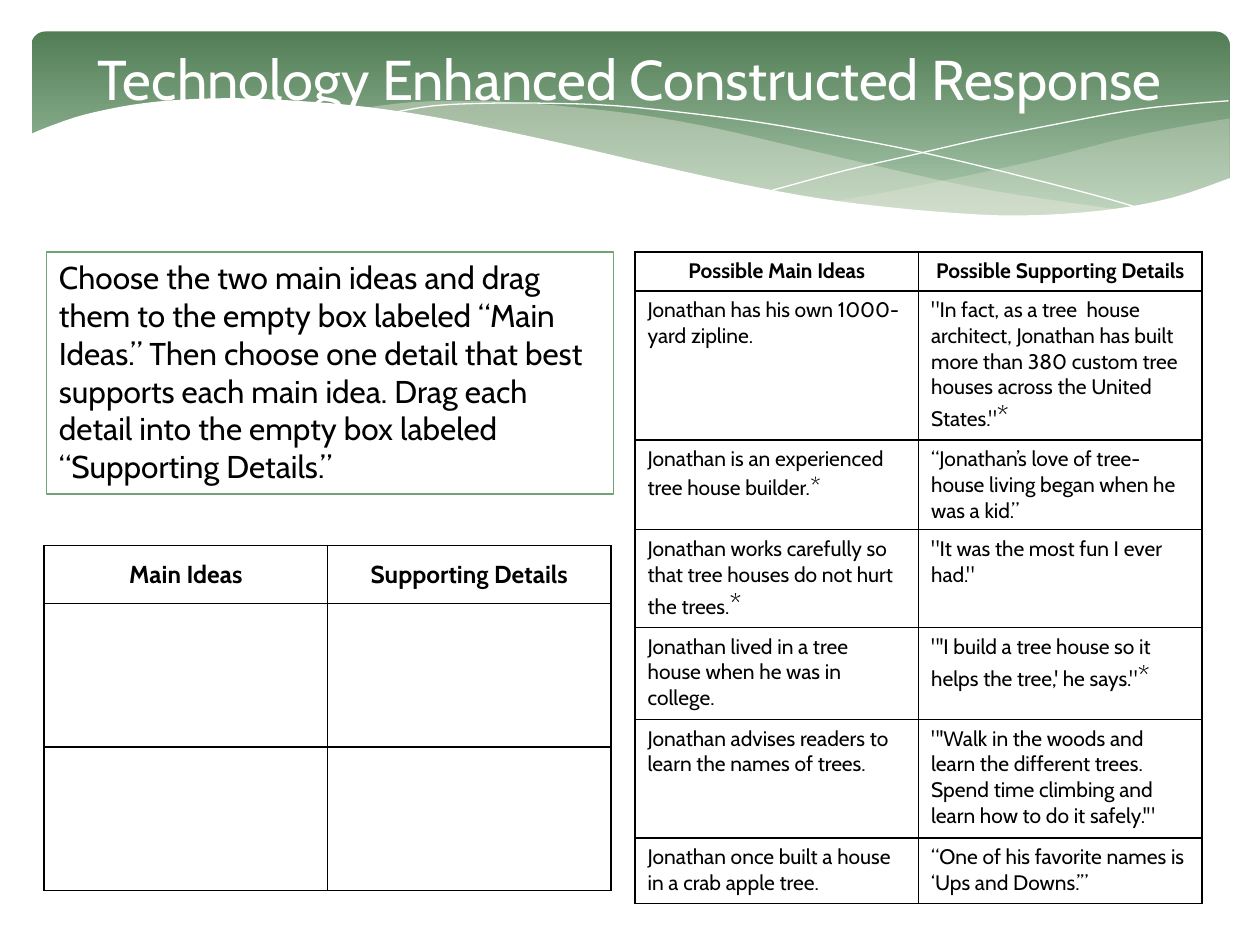
from lxml import etree
from pptx import Presentation, util as u
from pptx.dml.color import RGBColor
from pptx.enum import shapes, text
from pptx.oxml import ns

colour = RGBColor.from_string
INCH = u.Inches
LEFT, CENTER = text.PP_ALIGN.LEFT, text.PP_ALIGN.CENTER
TOP, MIDDLE = text.MSO_ANCHOR.TOP, text.MSO_ANCHOR.MIDDLE


def smooth(points, steps=4):
    """Return a Catmull-Rom curve through the points."""
    padded = [points[0], *points, points[-1]]
    curve = [points[0]]
    for a, b, c, d in zip(padded, padded[1:], padded[2:], padded[3:]):
        for t in (step / steps for step in range(1, steps + 1)):
            curve.append(tuple(
                (2 * q + (r - p) * t + (2 * p - 5 * q + 4 * r - s) * t ** 2
                 + (3 * q - p - 3 * r + s) * t ** 3) / 2
                for p, q, r, s in zip(a, b, c, d)))
    return curve


def write(frame, runs, hex_colour="000000", align=LEFT, bold=False):
    """Fill the first paragraph with (words, size) runs."""
    frame.word_wrap = True
    para = frame.paragraphs[0]
    para.alignment = align
    for words, size in runs:
        span = para.add_run()
        span.text = words
        style = {"name": "Cabin", "size": u.Pt(size), "bold": bold}
        for name, value in style.items():
            setattr(span.font, name, value)
        span.font.color.rgb = colour(hex_colour)


deck = Presentation()
deck.slide_width, deck.slide_height = INCH(10), INCH(7.5)
page = deck.slides.add_slide(deck.slide_layouts[6])

# Green banner
banner = page.shapes.add_shape(shapes.MSO_SHAPE.ROUNDED_RECTANGLE,
                               INCH(0.25), INCH(0.25), INCH(9.51), INCH(1.56))
banner.adjustments[0] = 0.07
banner.shadow.inherit = False
banner.line.fill.background()
banner.fill.gradient()
banner.fill.gradient_angle = 270
for stop, position, shade in zip(banner.fill.gradient_stops, (0, 0.9), ("527E56", "AAC8AD")):
    stop.position = position
    stop.color.rgb = colour(shade)

# Waves: curves that make up the outline, fill, opacity in percent (no fill: a thin line)
waves = [
    ([[(9.76, 0.94), (9.35, 1.01), (8.91, 1.1), (8.32, 1.25), (7.79, 1.37),
       (7.06, 1.52), (6.61, 1.6)],
      [(6.61, 1.6), (7.19, 1.67), (7.69, 1.71), (8.24, 1.72), (8.72, 1.69),
       (9.13, 1.62), (9.49, 1.52), (9.76, 1.41)]], "EAEBDE", 29),
    ([[(8.93, 1.67), (8.37, 1.59), (7.75, 1.49), (7.06, 1.34), (6.29, 1.16),
       (5.69, 1.02), (5.14, 0.92), (4.65, 0.86), (4.2, 0.82), (3.8, 0.8),
       (3.28, 0.81), (2.86, 0.86)],
      [(2.86, 0.86), (3.42, 0.94), (4.04, 1.06), (4.91, 1.26), (5.66, 1.43),
       (6.34, 1.56), (6.95, 1.65), (7.48, 1.7), (7.96, 1.73), (8.38, 1.72),
       (8.93, 1.67)]], "EAEBDE", 40),
    ([[(3.09, 0.9), (3.44, 0.84), (3.87, 0.82), (4.33, 0.82), (4.89, 0.84),
       (5.56, 0.91), (6.08, 0.98), (6.65, 1.08), (7.27, 1.2), (7.95, 1.36),
       (8.69, 1.55), (9.07, 1.66)]], None, None),
    ([[(6.13, 1.51), (6.72, 1.35), (7.2, 1.24), (7.76, 1.11), (8.36, 0.99),
       (8.95, 0.88), (9.38, 0.83), (9.75, 0.8)]], None, None),
    ([[(9.77, 1.41), (9.3, 1.57), (8.75, 1.67), (8.09, 1.71), (7.44, 1.68),
       (6.68, 1.6), (6.03, 1.49), (5.29, 1.33), (4.47, 1.14), (3.91, 1.02),
       (3.4, 0.92), (2.92, 0.85), (2.5, 0.81), (1.93, 0.78), (1.46, 0.79),
       (1.06, 0.83), (0.67, 0.91), (0.4, 1), (0.23, 1.07)],
      [(0.23, 2.24), (9.77, 2.24)]], "FFFFFF", 100),
]
for curves, fill, opacity in waves:
    points = [(INCH(x), INCH(y)) for curve in curves for x, y in smooth(curve)]
    builder = page.shapes.build_freeform(*points[0])
    builder.add_line_segments(points[1:], close=fill is not None)
    wave = builder.convert_to_shape()
    wave.shadow.inherit = False
    if fill:
        wave.line.fill.background()
        wave.fill.solid()
        wave.fill.fore_color.rgb = colour(fill)
        shade = wave.fill._xPr.find(".//" + ns.qn("a:srgbClr"))
        etree.SubElement(shade, ns.qn("a:alpha"), val=str(opacity * 1000))
    else:
        wave.fill.background()
        wave.line.color.rgb = colour("FFFFFF")
        wave.line.width = 0

# Tables: left, top, row heights, heading size, heading anchor, rows
# A cell is its words, or its words and the size of a closing asterisk
tables = [
    (5.04, 2, [0.31, 1.15, 0.52, 0.73, 0.73, 0.94, 0.52], 12, TOP, [
        ["Possible Main Ideas", "Possible Supporting Details"],
        ["Jonathan has his own 1000-yard zipline.",
         ('"In fact, as a tree  house architect, Jonathan has built  more than '
          '380 custom tree houses across the United States."', 16)],
        [("Jonathan is an experienced tree house builder.", 14),
         "“Jonathan’s love of tree-house living began when he was a kid.”"],
        [("Jonathan works carefully so that tree houses do not hurt the trees.", 16),
         '"It was the most fun I ever had."'],
        ["Jonathan lived in a tree house when he was in college.",
         ("\"'I build a tree house so it helps the tree,' he says.\"", 16)],
        ["Jonathan advises readers to learn the names of trees.",
         "\"'Walk in the woods and learn the different trees. Spend time "
         "climbing and learn how to do it safely.'\""],
        ["Jonathan once built a house in a crab apple tree.",
         "“One of his favorite names is ‘Ups and Downs.’”"],
    ]),
    (0.35, 4.33, [0.46, 1.14, 1.14], 14, MIDDLE,
     [["Main Ideas", "Supporting Details"], ["", ""], ["", ""]]),
]
for left, top, heights, heading_size, anchor, rows in tables:
    grid = page.shapes.add_table(len(rows), 2, INCH(left), INCH(top),
                                 INCH(4.5), INCH(sum(heights))).table
    for column in grid.columns:
        column.width = INCH(2.25)
    for r, (height, row) in enumerate(zip(heights, rows)):
        grid.rows[r].height = INCH(height)
        for c, entry in enumerate(row):
            cell = grid.cell(r, c)
            cell.fill.solid()
            cell.fill.fore_color.rgb = colour("FFFFFF")
            heading = r == 0
            if heading:
                cell.vertical_anchor = anchor
            words, star_size = entry if isinstance(entry, tuple) else (entry, None)
            runs = [(words, heading_size if heading else 12)] if words else []
            if star_size:
                runs.append(("*", star_size))
            write(cell.text_frame, runs, align=CENTER if heading else LEFT, bold=heading)
            # Black borders go before the fill
            properties = cell._tc.get_or_add_tcPr()
            for index, side in enumerate(("lnL", "lnR", "lnT", "lnB")):
                border = etree.Element(ns.qn("a:" + side), w=str(u.Pt(1)))
                paint = etree.SubElement(border, ns.qn("a:solidFill"))
                etree.SubElement(paint, ns.qn("a:srgbClr"), val="000000")
                properties.insert(index, border)

# Instructions
box = page.shapes.add_shape(shapes.MSO_SHAPE.RECTANGLE,
                            INCH(0.37), INCH(2), INCH(4.5), INCH(1.92))
box.shadow.inherit = False
box.fill.solid()
box.fill.fore_color.rgb = colour("FFFFFF")
box.line.color.rgb = colour("72A376")
box.line.width = u.Pt(0.75)
box.text_frame.vertical_anchor = TOP
write(box.text_frame, [(
    "Choose the two main ideas and drag them to the empty box labeled “Main Ideas.” "
    "Then choose one detail that best supports each main idea. Drag each detail into "
    "the empty box labeled “Supporting Details.”", 18)])

# Title
title = page.shapes.add_textbox(INCH(0.5), INCH(0.3), INCH(9), INCH(0.78))
write(title.text_frame, [("Technology Enhanced Constructed Response", 32)], "FFFFFF", CENTER)

deck.save("out.pptx")
